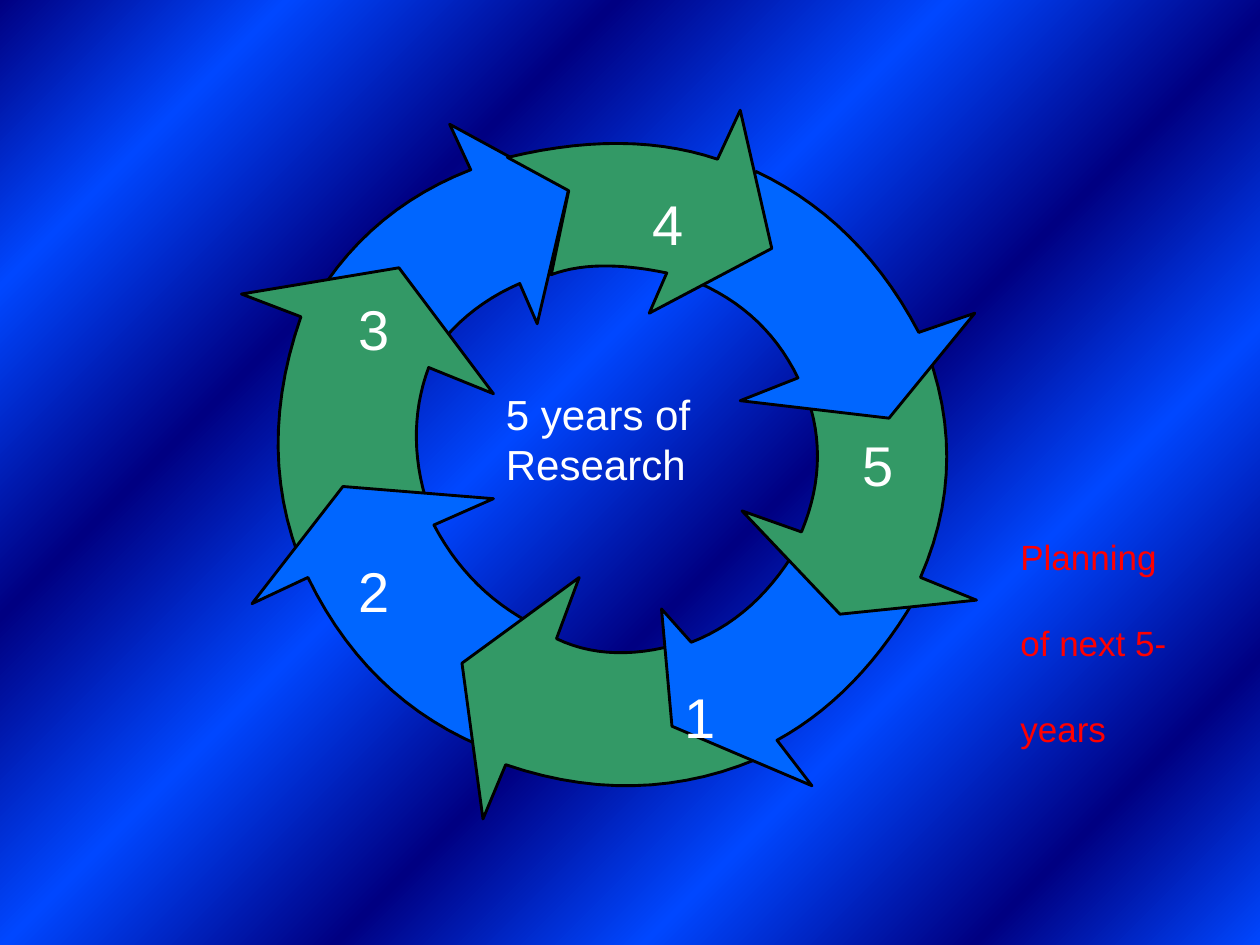
"""Build a slide with a cycle of eight arrows around five years of research."""
from typing import NamedTuple

from lxml.etree import SubElement
from pptx import Presentation
from pptx.dml.color import RGBColor
from pptx.oxml.ns import qn
from pptx.slide import Slide
from pptx.util import Pt

COLORS = {
    "navy": "000082",
    "bright": "0047FF",
    "blue": "0066FF",
    "green": "339966",
    "outline": "000000",
    "white": "FFFFFF",
    "red": "FF0000",
}
STRIPE_POSITIONS = (0, 13, 28, 43, 58, 72, 87, 100)
ARC_STEPS = 14

Point = tuple[float, float]
Triple = tuple[Point, Point, Point]


class CycleArrow(NamedTuple):
    """Outer arc, head corners and inner arc of one arrow, in points."""

    color: str
    outer: Triple
    head: Triple
    inner: Triple
    notch: tuple[Point, ...] = ()


class Label(NamedTuple):
    """Paragraphs with their box, in points."""

    lines: tuple[str, ...]
    left: float
    top: float
    width: float
    height: float
    size: float
    color: str = "white"
    gap: float = 0


ARROWS = (
    CycleArrow("blue", ((172, 186), (212, 132), (269, 97)),
               ((257, 71), (325, 108), (307, 185)),
               ((297, 162), (263, 184), (239, 216))),
    CycleArrow("green", ((174, 326), (159, 256), (172, 181)),
               ((138, 168), (228, 153), (282, 225)),
               ((245, 210), (238, 246), (243, 284))),
    CycleArrow("blue", ((274, 426), (217, 388), (176, 330)),
               ((144, 345), (196, 278), (282, 285)),
               ((248, 300), (273, 334), (307, 358))),
    CycleArrow("green", ((432, 434), (362, 449), (289, 437)),
               ((276, 468), (264, 379), (331, 330)),
               ((318, 365), (352, 373), (391, 367))),
    CycleArrow("blue", ((523, 342), (487, 390), (444, 423)),
               ((464, 449), (384, 415), (378, 348)),
               ((395, 367), (429, 346), (456, 312))),
    CycleArrow("green", ((526, 191), (541, 261), (526, 330)),
               ((558, 343), (480, 351), (424, 292)),
               ((458, 304), (467, 266), (462, 229))),
    CycleArrow("blue", ((432, 98), (485, 135), (525, 190)),
               ((557, 179), (508, 239), (423, 229)),
               ((456, 216), (433, 184), (400, 162))),
    CycleArrow("green", ((290, 90), (354, 82), (410, 91)),
               ((423, 63), (441, 142), (371, 179)),
               ((381, 156), (344, 152), (315, 157)), ((325, 109),)),
)
YEAR_POSITIONS = {
    "2": (198, 312),
    "1": (384, 384),
    "5": (486, 240),
    "4": (366, 102),
    "3": (198, 162),
}
LABELS = (
    Label(("5 years of Research",), 282, 216, 144, 66, 24),
    *(Label((year,), left, top, 36, 46, 32)
      for year, (left, top) in YEAR_POSITIONS.items()),
    Label(("Planning", "of next 5-", "years"), 576, 300, 108, 128, 20, "red", 25),
)


def rgb(name: str) -> RGBColor:
    """Look up a named colour."""
    return RGBColor.from_string(COLORS[name])


def arc_points(arc: Triple) -> list[Point]:
    """Sample the smooth curve through the start, middle and end points."""
    points = []
    for step in range(ARC_STEPS + 1):
        t = step / ARC_STEPS
        weights = ((1 - t) * (1 - 2 * t), 4 * t * (1 - t), t * (2 * t - 1))
        x, y = (sum(weight * point[axis] for weight, point in zip(weights, arc))
                for axis in (0, 1))
        points.append((x, y))
    return points


def paint_background(slide: Slide) -> None:
    """Fill the background with alternating diagonal stripes."""
    fill = slide.background.fill
    fill.gradient()
    fill.gradient_angle = 315
    stops = slide.element.xpath(".//a:gsLst")[0]
    stops.clear()
    for index, position in enumerate(STRIPE_POSITIONS):
        stop = SubElement(stops, qn("a:gs"), pos=str(position * 1000))
        color = COLORS["bright" if index % 2 else "navy"]
        SubElement(stop, qn("a:srgbClr"), val=color)


def draw_arrow(slide: Slide, arrow: CycleArrow) -> None:
    """Draw one arrow of the cycle."""
    outline = [*arc_points(arrow.outer), *arrow.head,
               *arc_points(arrow.inner), *arrow.notch]
    vertices = [(Pt(x), Pt(y)) for x, y in outline]
    builder = slide.shapes.build_freeform(*vertices[0])
    builder.add_line_segments(vertices[1:], close=True)
    shape = builder.convert_to_shape()
    shape.shadow.inherit = False
    shape.fill.solid()
    shape.fill.fore_color.rgb = rgb(arrow.color)
    shape.line.color.rgb = rgb("outline")
    shape.line.width = Pt(1.63)


def draw_label(slide: Slide, label: Label) -> None:
    """Draw a text box with one paragraph a line."""
    box = slide.shapes.add_textbox(
        Pt(label.left), Pt(label.top), Pt(label.width), Pt(label.height))
    text_frame = box.text_frame
    text_frame.word_wrap = True
    text_frame.margin_top = Pt(6)
    text_frame.text = "\n".join(label.lines)
    for index, paragraph in enumerate(text_frame.paragraphs):
        if index:
            paragraph.space_before = Pt(label.gap)
        for run in paragraph.runs:
            run.font.name = "Arial"
            run.font.size = Pt(label.size)
            run.font.color.rgb = rgb(label.color)


def main() -> None:
    """Build and save the presentation."""
    presentation = Presentation()
    presentation.slide_width = Pt(720)
    presentation.slide_height = Pt(540)
    slide = presentation.slides.add_slide(
        presentation.slide_layouts.get_by_name("Blank"))
    paint_background(slide)
    for arrow in ARROWS:
        draw_arrow(slide, arrow)
    for label in LABELS:
        draw_label(slide, label)
    presentation.save("out.pptx")


if __name__ == "__main__":
    main()
